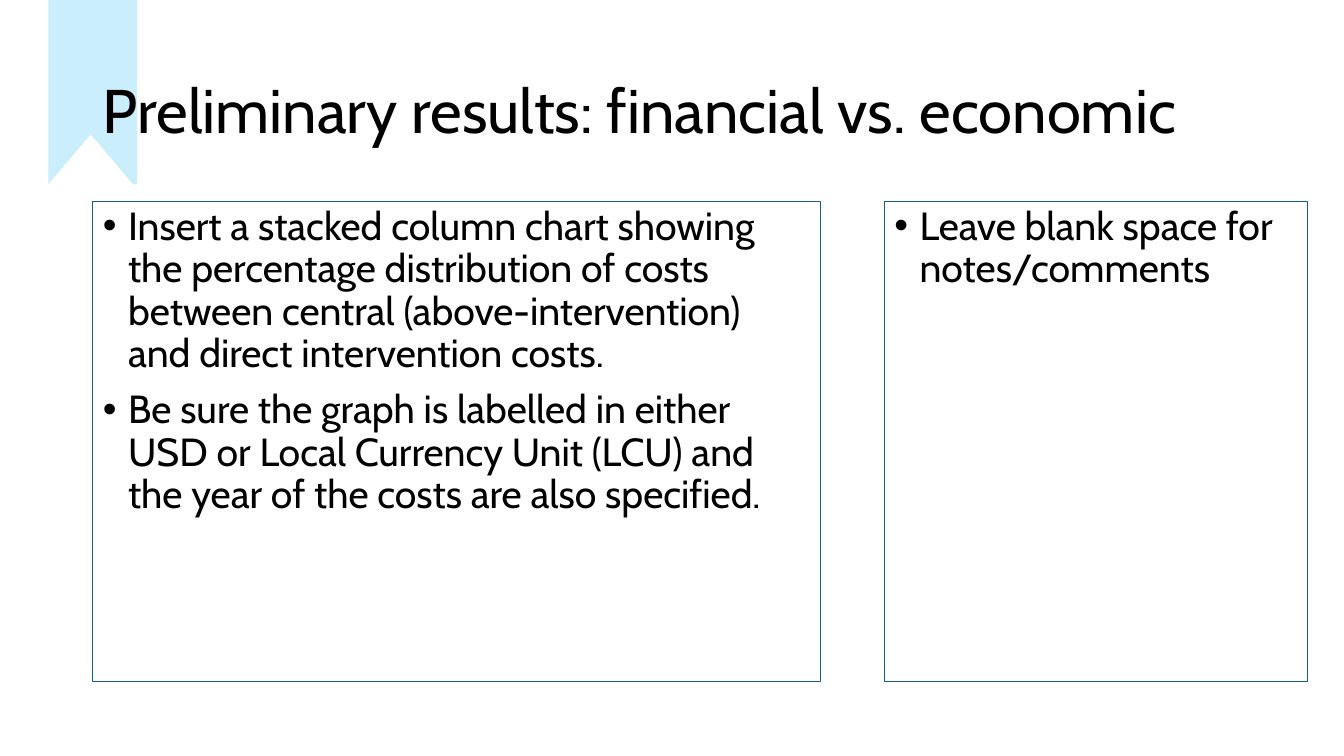
from dataclasses import dataclass

from lxml import etree
from pptx import Presentation
from pptx.dml.color import RGBColor
from pptx.enum.shapes import MSO_SHAPE as Shp
from pptx.enum.text import MSO_ANCHOR as Anchor, MSO_AUTO_SIZE as AutoSize, PP_ALIGN as Align
from pptx.oxml.ns import qn
from pptx.util import Inches, Pt

BLACK = RGBColor(0x00, 0x00, 0x00)
WHITE = RGBColor(0xFF, 0xFF, 0xFF)
PALE_BLUE = RGBColor(0xCA, 0xEE, 0xFB)
TEAL = RGBColor(0x15, 0x60, 0x82)
FONT = "Cabin"
PANEL_TOP, PANEL_HEIGHT = 2, 4.76


@dataclass
class Panel:
    idx: int
    left: float
    width: float
    items: list[str]


PANELS = [
    Panel(1, 0.92, 7.22, [
        "Insert a stacked column chart showing the percentage distribution of costs "
        "between central (above-intervention) and direct intervention costs.",
        "Be sure the graph is labelled in either USD or Local Currency Unit (LCU) "
        "and the year of the costs are also specified.",
    ]),
    Panel(2, 8.77, 4.2, ["Leave blank space for notes/comments"]),
]


def place(sp, left: float, top: float, width: float, height: float) -> None:
    sp.left, sp.top = Inches(left), Inches(top)
    sp.width, sp.height = Inches(width), Inches(height)


def write(p, text: str, *, size: float, before: float = 0, bullet: bool = False) -> None:
    if bullet:
        pPr = p._p.get_or_add_pPr()
        pPr.set("marL", str(Inches(0.25)))
        pPr.set("indent", str(Inches(-0.25)))
        etree.SubElement(pPr, qn("a:buFont"), typeface="Arial")
        etree.SubElement(pPr, qn("a:buChar"), char="•")
    p.alignment = Align.LEFT
    p.line_spacing = 0.9
    p.space_before = Pt(before)
    r = p.add_run()
    r.text = text
    r.font.name, r.font.size = FONT, Pt(size)
    r.font.color.rgb = BLACK


def set_frame(tf, anchor: Anchor) -> None:
    tf.word_wrap = True
    tf.auto_size = AutoSize.NONE
    tf.vertical_anchor = anchor


def add_ribbon_part(s, kind: Shp, box: tuple, fill: RGBColor):
    sp = s.shapes.add_shape(kind, *map(Inches, box))
    sp.shadow.inherit = False
    sp.fill.solid()
    sp.fill.fore_color.rgb = fill
    sp.line.fill.background()
    return sp


def fill_panel(sp, panel: Panel) -> None:
    place(sp, panel.left, PANEL_TOP, panel.width, PANEL_HEIGHT)
    sp.line.color.rgb = TEAL
    sp.line.width = Pt(0.75)
    tf = sp.text_frame
    set_frame(tf, Anchor.TOP)
    for i, item in enumerate(panel.items):
        p = tf.add_paragraph() if i else tf.paragraphs[0]
        write(p, item, size=28, before=10 if i else 0, bullet=True)


def main() -> None:
    prs = Presentation()
    prs.slide_width, prs.slide_height = Inches(13.33), Inches(7.5)
    s = prs.slides.add_slide(prs.slide_layouts[3])
    text_shapes = list(s.placeholders)

    # Ribbon with a notched end
    add_ribbon_part(s, Shp.RECTANGLE, (0.48, 0, 0.88, 1.83), PALE_BLUE)
    notch = add_ribbon_part(s, Shp.ISOSCELES_TRIANGLE, (0.4, 1.35, 1, 0.59), WHITE)
    notch.line.color.rgb = WHITE
    notch.line.width = Pt(1.5)

    # Text stands in front of the ribbon
    for sp in text_shapes:
        sp.element.getparent().append(sp.element)

    # Title
    title = s.shapes.title
    place(title, 0.92, 0.4, 11.5, 1.45)
    set_frame(title.text_frame, Anchor.MIDDLE)
    write(title.text_frame.paragraphs[0], "Preliminary results: financial vs. economic", size=44)

    # Framed lists
    for panel in PANELS:
        fill_panel(s.placeholders[panel.idx], panel)

    prs.save("out.pptx")


if __name__ == "__main__":
    main()
